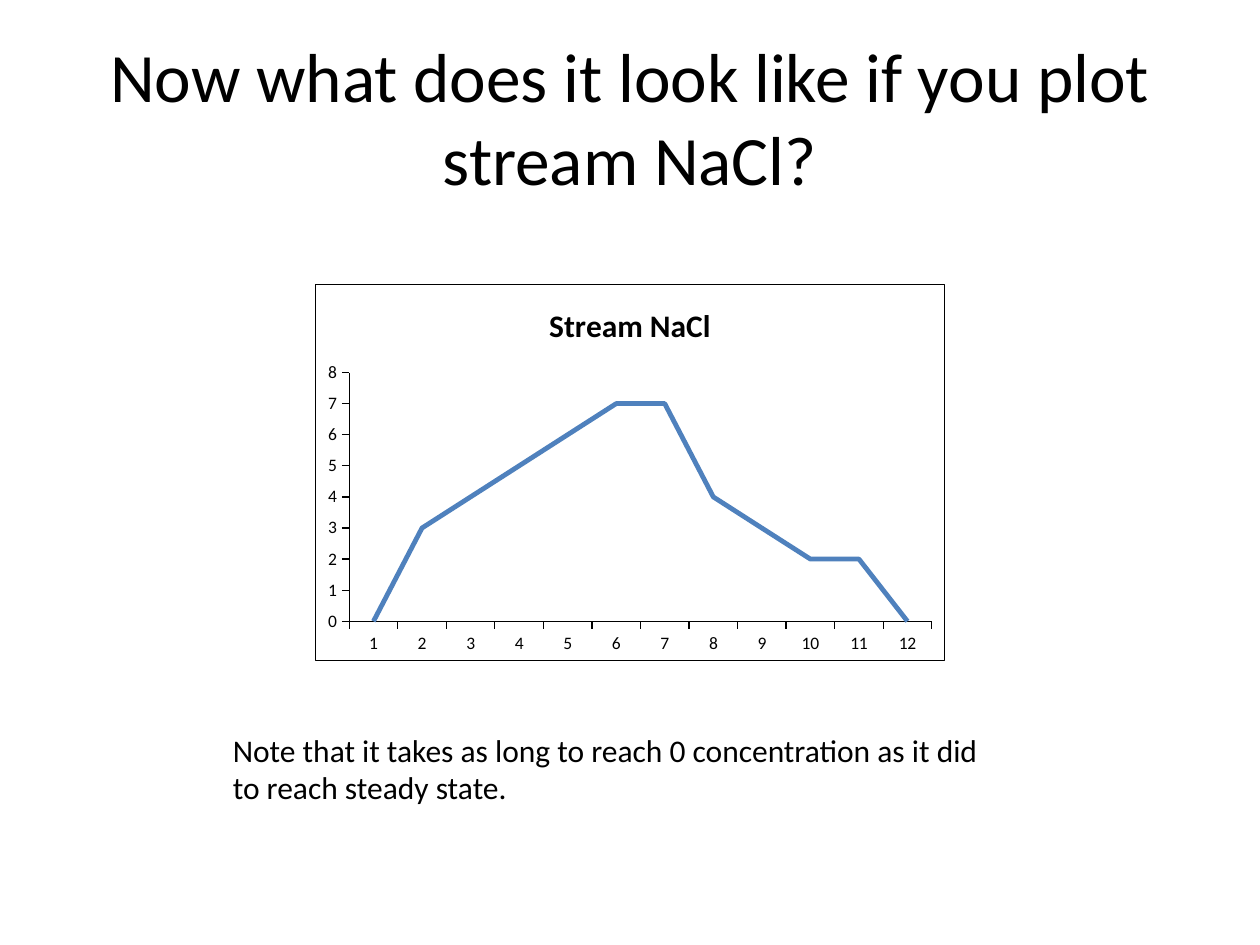
import dataclasses

import lxml.etree
import pptx
import pptx.chart.data
import pptx.dml.color
import pptx.enum.chart
import pptx.enum.text
import pptx.oxml
import pptx.oxml.ns
import pptx.util


@dataclasses.dataclass(frozen=True)
class Theme:
    font: str = "Calibri"
    ink: str = "000000"
    paper: str = "FFFFFF"
    series: str = "4F81BD"
    title_size: float = 39.6
    body_size: float = 18
    axis_size: float = 10
    thin: float = 0.75
    thick: float = 2.75


THEME = Theme()
WIDTH, HEIGHT = pptx.util.Inches(10), pptx.util.Inches(7.5)
NACL = (0, 3, 4, 5, 6, 7, 7, 4, 3, 2, 2, 0)


def rgb(color):
    return pptx.dml.color.RGBColor.from_string(color)


def share(left, top, width, height):
    """Turn shares of the slide's size into a box of lengths."""
    return (int(left * WIDTH), int(top * HEIGHT),
            int(width * WIDTH), int(height * HEIGHT))


def set_all(target, values):
    for name, value in values.items():
        setattr(target, name, value)


def style_font(font, size, bold=False):
    set_all(font, {"name": THEME.font, "size": pptx.util.Pt(size), "bold": bold})
    font.color.rgb = rgb(THEME.ink)


def style_line(line, color, width):
    line.color.rgb = rgb(color)
    line.width = pptx.util.Pt(width)


def add_text(slide, box, text, size, align, anchor):
    tf = slide.shapes.add_textbox(*box).text_frame
    set_all(tf, {"word_wrap": True, "vertical_anchor": anchor})
    p = tf.paragraphs[0]
    p.alignment = align
    r = p.add_run()
    r.text = text
    style_font(r.font, size)


def add_frame(chart):
    """Fill the chart area and outline it with a thin line."""
    frame = pptx.oxml.parse_xml(
        f'<c:spPr {pptx.oxml.ns.nsdecls("c", "a")}>'
        f'<a:solidFill><a:srgbClr val="{THEME.paper}"/></a:solidFill>'
        f'<a:ln w="{pptx.util.Pt(THEME.thin)}"><a:solidFill>'
        f'<a:srgbClr val="{THEME.ink}"/></a:solidFill></a:ln></c:spPr>')
    chart.element.find(pptx.oxml.ns.qn("c:chart")).addnext(frame)


def add_nacl_chart(slide, box):
    data = pptx.chart.data.CategoryChartData()
    data.categories = [str(n) for n in range(1, len(NACL) + 1)]
    data.add_series("Stream NaCl", NACL)
    chart = slide.shapes.add_chart(
        pptx.enum.chart.XL_CHART_TYPE.LINE, *box, data).chart
    set_all(chart, {"has_legend": False, "has_title": True})
    style_font(chart.font, THEME.axis_size)
    add_frame(chart)

    tf = chart.chart_title.text_frame
    tf.text = "Stream NaCl"
    style_font(tf.paragraphs[0].runs[0].font, THEME.body_size, bold=True)

    for axis in (chart.category_axis, chart.value_axis):
        set_all(axis, {
            "has_major_gridlines": False,
            "major_tick_mark": pptx.enum.chart.XL_TICK_MARK.OUTSIDE,
            "minor_tick_mark": pptx.enum.chart.XL_TICK_MARK.NONE})
        style_line(axis.format.line, THEME.ink, THEME.thin)
    set_all(chart.value_axis,
            {"minimum_scale": 0, "maximum_scale": 8, "major_unit": 1})

    chart.plots[0].vary_by_categories = False
    series = chart.plots[0].series[0]
    series.smooth = False
    series.marker.style = pptx.enum.chart.XL_MARKER_STYLE.NONE
    style_line(series.format.line, THEME.series, THEME.thick)


def main():
    prs = pptx.Presentation()
    set_all(prs, {"slide_width": WIDTH, "slide_height": HEIGHT})
    slide = prs.slides.add_slide(prs.slide_layouts[6])
    align, anchor = pptx.enum.text.PP_ALIGN, pptx.enum.text.MSO_ANCHOR
    add_nacl_chart(slide, share(0.25, 0.3, 0.5, 0.4))
    add_text(slide, share(0.05, 0.04, 0.9, 1 / 6),
             "Now what does it look like if you plot stream NaCl?",
             THEME.title_size, align.CENTER, anchor.MIDDLE)
    add_text(slide, share(0.175, 23 / 30, 0.633, 0.095),
             "Note that it takes as long to reach 0 concentration as it did "
             "to reach steady state.",
             THEME.body_size, align.LEFT, anchor.TOP)
    prs.save("out.pptx")


if __name__ == "__main__":
    main()
